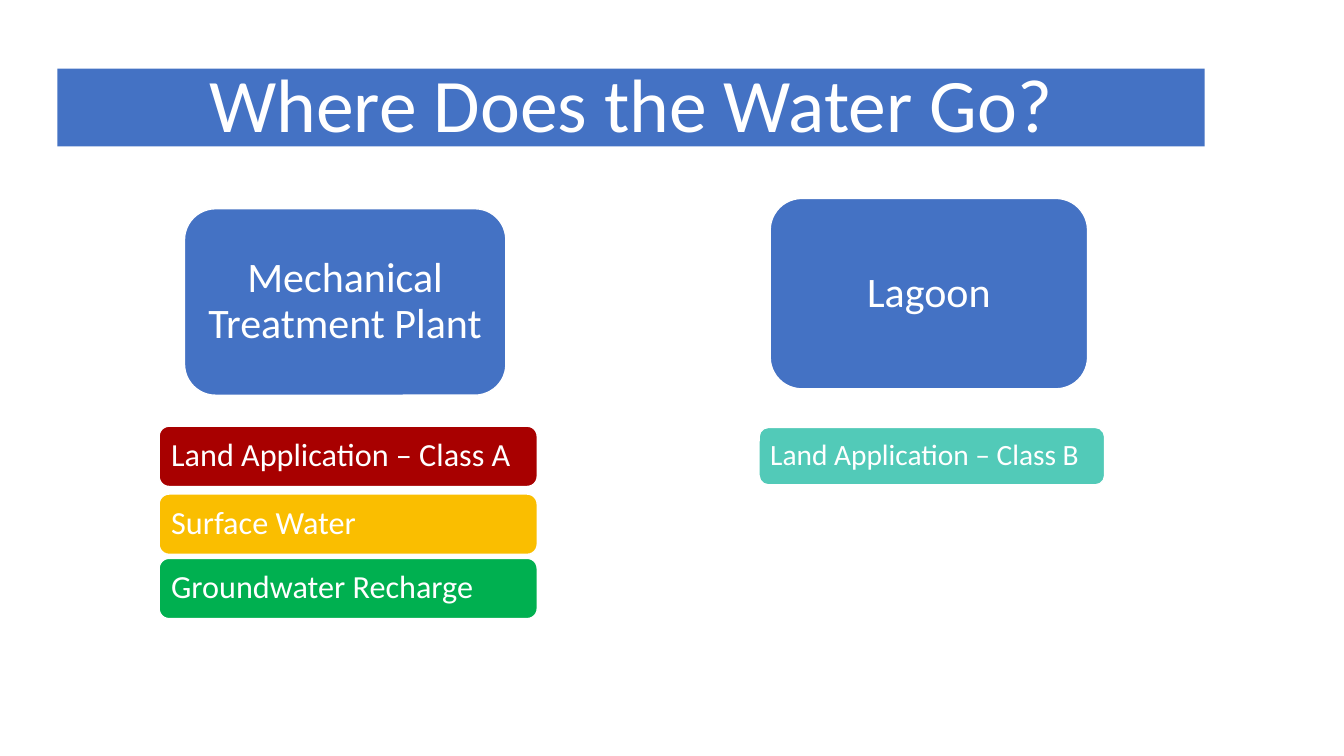
from pptx import Presentation
from pptx.dml.color import RGBColor
from pptx.enum import shapes, text
from pptx.util import Cm, Pt

COLORS = {
    "blue": "4472C4",
    "red": "A80000",
    "yellow": "FABE00",
    "green": "00B050",
    "teal": "52CAB8",
    "white": "FFFFFF",
}
RECTANGLE = shapes.MSO_SHAPE.RECTANGLE
ROUNDED = shapes.MSO_SHAPE.ROUNDED_RECTANGLE

presentation = Presentation()
presentation.slide_width = Cm(33.87)
presentation.slide_height = Cm(19.05)
slide = presentation.slides.add_slide(presentation.slide_layouts[6])


def write(shape, words, size, align=text.PP_ALIGN.CENTER, inset=0.25):
    """Put one white, vertically centred paragraph in the shape."""
    frame = shape.text_frame
    frame.word_wrap = True
    frame.vertical_anchor = text.MSO_ANCHOR.MIDDLE
    frame.margin_left = frame.margin_right = Cm(inset)
    frame.margin_top = frame.margin_bottom = Cm(min(inset, 0.13) if size > 50 else inset)
    paragraph = frame.paragraphs[0]
    paragraph.alignment = align
    paragraph.line_spacing = 0.9
    run = paragraph.add_run()
    run.text = words
    run.font.name = "Calibri"
    run.font.size = Pt(size)
    run.font.color.rgb = RGBColor.from_string(COLORS["white"])


def add_box(kind, left, top, width, height, color, outlined=True):
    shape = slide.shapes.add_shape(kind, Cm(left), Cm(top), Cm(width), Cm(height))
    shape.shadow.inherit = False
    shape.fill.solid()
    shape.fill.fore_color.rgb = RGBColor.from_string(COLORS[color])
    if outlined:
        shape.line.color.rgb = RGBColor.from_string(COLORS["white"])
        shape.line.width = Pt(1)
    else:
        shape.line.fill.background()
    return shape


title = add_box(RECTANGLE, 1.45, 1.73, 28.91, 1.96, "blue", outlined=False)
write(title, "Where Does the Water Go?", 54)

# Treatment systems
for words, left, top, width, height in [
    ("Lagoon", 19.41, 5, 8, 4.8),
    ("Mechanical Treatment Plant", 4.65, 5.26, 8.1, 4.7),
]:
    system = add_box(ROUNDED, left, top, width, height, "blue")
    write(system, words, 30, inset=0.3)

# Destinations of the treated water
for words, color, left, top, width, height, size in [
    ("Land Application – Class A", "red", 4.01, 10.74, 9.53, 1.52, 23),
    ("Surface Water", "yellow", 4.01, 12.45, 9.53, 1.52, 23),
    ("Groundwater Recharge", "green", 4.01, 14.07, 9.53, 1.52, 23),
    ("Land Application – Class B", "teal", 19.13, 10.77, 8.71, 1.45, 21),
]:
    destination = add_box(ROUNDED, left, top, width, height, color)
    write(destination, words, size, align=text.PP_ALIGN.LEFT, inset=size / 100)

presentation.save("out.pptx")
